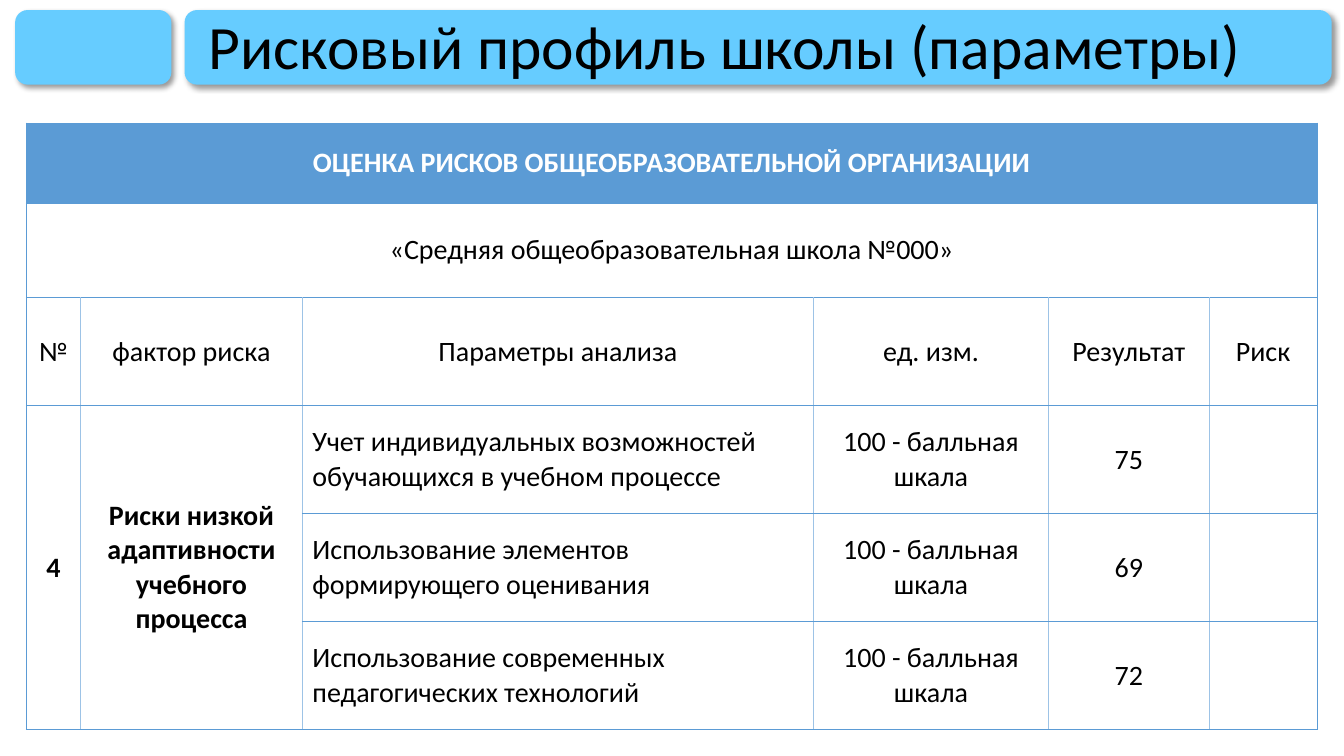
from dataclasses import dataclass

from lxml.etree import SubElement
from pptx import Presentation
from pptx.dml.color import RGBColor
from pptx.enum.shapes import MSO_SHAPE as Shape
from pptx.enum.text import MSO_ANCHOR as Anchor, PP_ALIGN as Align
from pptx.oxml import parse_xml
from pptx.oxml.ns import nsdecls, qn
from pptx.util import Pt

SKY, BLUE, PALE = "66CCFF", "5B9BD5", "9DC3E6"
BLACK, WHITE = "000000", "FFFFFF"
FONT = "Calibri"


@dataclass
class Bar:
    left: float
    width: float


@dataclass
class Entry:
    row: int
    col: int
    text: str
    bold: bool = False
    color: str = BLACK
    align: Align = Align.CENTER
    rows: int = 1
    cols: int = 1


def hue(code: str) -> RGBColor:
    return RGBColor.from_string(code)


def style(font, size: float, color: str, bold: bool = False) -> None:
    for key, value in {"name": FONT, "size": Pt(size), "bold": bold}.items():
        setattr(font, key, value)
    font.color.rgb = hue(color)


def draw_bar(slide, bar: Bar) -> None:
    shape = slide.shapes.add_shape(
        Shape.ROUNDED_RECTANGLE, Pt(bar.left), Pt(7.2), Pt(bar.width), Pt(53.3))
    shape.shadow.inherit = False
    shape.fill.solid()
    shape.fill.fore_color.rgb = hue(SKY)
    shape.line.fill.background()
    # Soft shadow towards the lower right
    effects = shape._element.spPr.find(qn("a:effectLst"))
    effects.append(parse_xml(
        f'<a:outerShdw {nsdecls("a")} blurRad="{Pt(4)}" dist="{Pt(3)}" '
        f'dir="2700000" algn="tl" rotWithShape="0"><a:srgbClr val="{BLACK}">'
        '<a:alpha val="40000"/></a:srgbClr></a:outerShdw>'))


def draw_title(slide, text: str) -> None:
    box = slide.shapes.add_textbox(Pt(141.8), Pt(11.5), Pt(799.2), Pt(47.5))
    frame = box.text_frame
    frame.word_wrap = True
    frame.vertical_anchor = Anchor.MIDDLE
    para = frame.paragraphs[0]
    para.text = text
    para.line_spacing = 0.9
    style(para.font, 44, BLACK)


def edge(cell, side: str, color: str, width: float) -> None:
    props = cell._tc.get_or_add_tcPr()
    line = SubElement(props, qn(f"a:ln{side}"), w=str(Pt(width)))
    fill = SubElement(line, qn("a:solidFill"))
    SubElement(fill, qn("a:srgbClr"), val=color)


def draw_grid(slide, cols: list[float], rows: list[float], entries: list[Entry]) -> None:
    table = slide.shapes.add_table(
        len(rows), len(cols), Pt(18.7), Pt(87.8), Pt(sum(cols)), Pt(sum(rows))).table
    table.horz_banding = False
    for col, width in zip(table.columns, cols):
        col.width = Pt(width)
    for row, height in zip(table.rows, rows):
        row.height = Pt(height)

    # Thin blue frame and rows, pale inner columns below the two wide rows
    rim, inner = (BLUE, 0.5), (PALE, 1)
    last = len(cols) - 1
    for i in range(len(rows)):
        for j in range(len(cols)):
            cell = table.cell(i, j)
            edge(cell, "L", *(rim if i < 2 or j == 0 else inner))
            edge(cell, "R", *(rim if i < 2 or j == last else inner))
            edge(cell, "T", *rim)
            edge(cell, "B", *rim)
            cell.fill.solid()
            cell.fill.fore_color.rgb = hue(WHITE if i else BLUE)

    # Cell texts
    for item in entries:
        cell = table.cell(item.row, item.col)
        if item.rows * item.cols > 1:
            cell.merge(table.cell(item.row + item.rows - 1, item.col + item.cols - 1))
        cell.vertical_anchor = Anchor.MIDDLE
        para = cell.text_frame.paragraphs[0]
        para.text = item.text
        para.alignment = item.align
        style(para.runs[0].font, 20, item.color, item.bold)


def main() -> None:
    deck = Presentation()
    deck.slide_width, deck.slide_height = Pt(960), Pt(540)
    slide = deck.slides.add_slide(deck.slide_layouts[6])

    # Title strip
    for bar in (Bar(131.8, 819.4), Bar(10.8, 111.6)):
        draw_bar(slide, bar)
    draw_title(slide, "Рисковый профиль школы (параметры)")

    # Risk table
    heads = ["№", "фактор риска", "Параметры анализа", "ед. изм.", "Результат", "Риск"]
    scores = [
        ("Учет индивидуальных возможностей обучающихся в учебном процессе", "75"),
        ("Использование элементов формирующего оценивания", "69"),
        ("Использование современных педагогических технологий", "72"),
    ]
    entries = [
        Entry(0, 0, "ОЦЕНКА РИСКОВ ОБЩЕОБРАЗОВАТЕЛЬНОЙ ОРГАНИЗАЦИИ", True, WHITE, cols=6),
        Entry(1, 0, "«Средняя общеобразовательная школа №000»", cols=6),
        *(Entry(2, j, head) for j, head in enumerate(heads)),
        Entry(3, 0, "4", True, rows=3),
        Entry(3, 1, "Риски низкой адаптивности учебного процесса", True, rows=3),
    ]
    for i, (topic, score) in enumerate(scores, 3):
        entries += [Entry(i, 2, topic, align=Align.LEFT),
                    Entry(i, 3, "100 - балльная шкала"),
                    Entry(i, 4, score)]
    draw_grid(slide, [38.9, 158.4, 365.2, 167.8, 114.7, 77.2],
              [57.4, 67.4] + [77.15] * 4, entries)

    deck.save("out.pptx")


if __name__ == "__main__":
    main()
